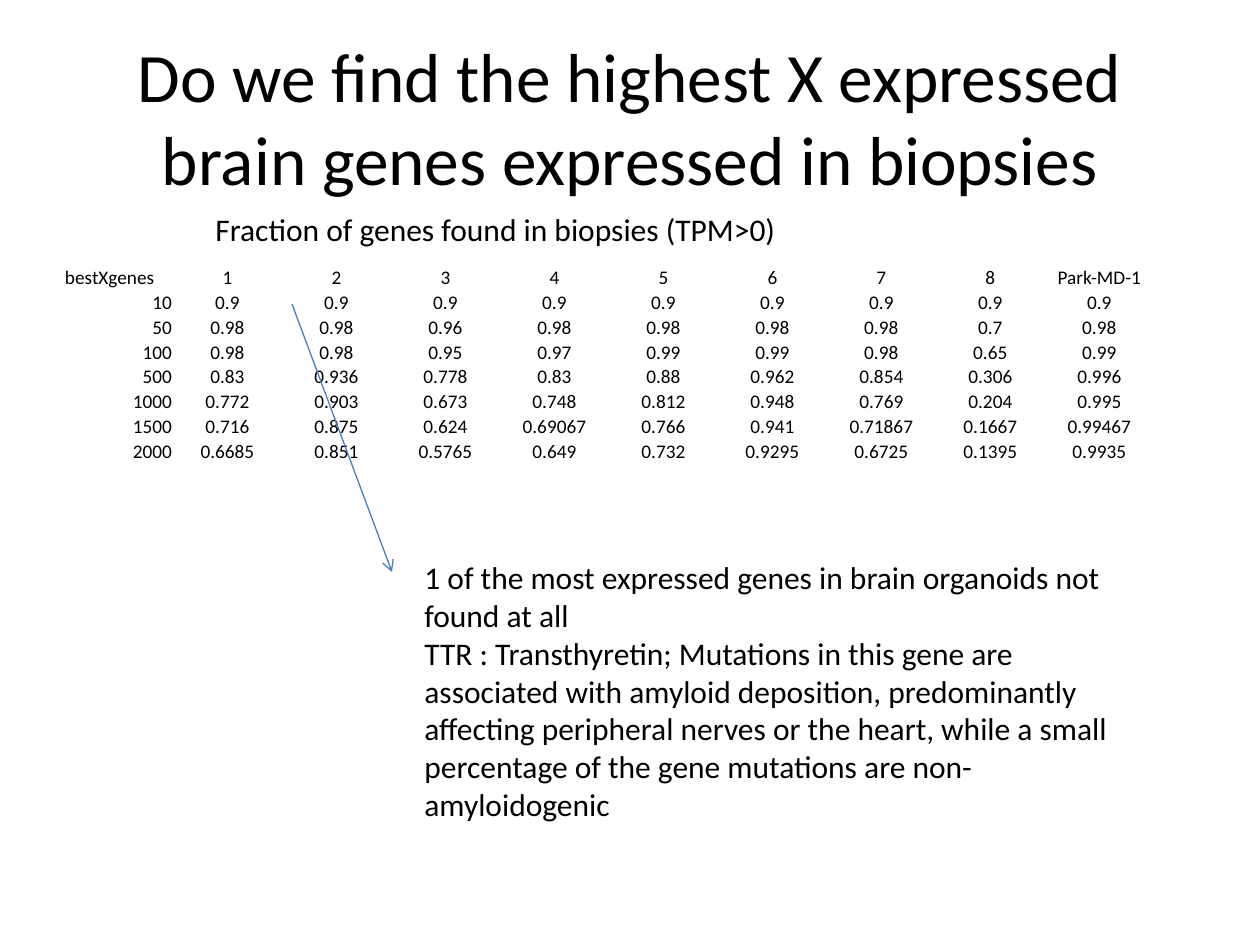
"""Build a slide with a table of gene fractions found in biopsies and a note on the missing gene."""
from pptx import Presentation
from pptx.dml.color import RGBColor
from pptx.enum.shapes import MSO_CONNECTOR
from pptx.enum.text import MSO_ANCHOR, MSO_AUTO_SIZE, PP_ALIGN
from pptx.oxml.ns import qn
from pptx.util import Emu, Pt
from lxml.etree import SubElement

TITLE = "Do we find the highest X expressed brain genes expressed in biopsies"
CAPTION = "Fraction of genes found in biopsies (TPM>0)"
NOTE = [
    "1 of the most expressed genes in brain organoids not found at all",
    "TTR : Transthyretin; Mutations in this gene are associated with amyloid deposition, "
    "predominantly affecting peripheral nerves or the heart, while a small percentage of "
    "the gene mutations are non-amyloidogenic",
]
HEADER = ["bestXgenes", 1, 2, 3, 4, 5, 6, 7, 8, "Park-MD-1"]
FRACTIONS = [
    [10, 0.9, 0.9, 0.9, 0.9, 0.9, 0.9, 0.9, 0.9, 0.9],
    [50, 0.98, 0.98, 0.96, 0.98, 0.98, 0.98, 0.98, 0.7, 0.98],
    [100, 0.98, 0.98, 0.95, 0.97, 0.99, 0.99, 0.98, 0.65, 0.99],
    [500, 0.83, 0.936, 0.778, 0.83, 0.88, 0.962, 0.854, 0.306, 0.996],
    [1000, 0.772, 0.903, 0.673, 0.748, 0.812, 0.948, 0.769, 0.204, 0.995],
    [1500, 0.716, 0.875, 0.624, 0.69067, 0.766, 0.941, 0.71867, 0.1667, 0.99467],
    [2000, 0.6685, 0.851, 0.5765, 0.649, 0.732, 0.9295, 0.6725, 0.1395, 0.9935],
]
COLORS = {"text": "000000", "arrow": "4B7EBC"}
FONT = "Calibri"
COL_W, HEAD_H, ROW_H = 109, 45, 24


def px(n):
    return Emu(n * 914400 // 126)


def style(p, size, align=PP_ALIGN.LEFT):
    p.alignment = align
    p.font.name, p.font.size = FONT, Pt(size)
    p.font.color.rgb = RGBColor.from_string(COLORS["text"])


def add_title(s, text, box):
    sp = s.shapes.title
    sp.left, sp.top, sp.width, sp.height = map(px, box)
    tf = sp.text_frame
    tf.text = text
    tf.auto_size = MSO_AUTO_SIZE.NONE
    tf.vertical_anchor = MSO_ANCHOR.MIDDLE
    style(tf.paragraphs[0], 39.6, PP_ALIGN.CENTER)


def add_text(s, lines, box, wrap):
    tf = s.shapes.add_textbox(*map(px, box)).text_frame
    tf.word_wrap = wrap
    tf.auto_size = MSO_AUTO_SIZE.SHAPE_TO_FIT_TEXT
    tf.text = "\n".join(lines)
    for p in tf.paragraphs:
        style(p, 18)


def add_fractions(s, rows, left, top):
    n_rows, n_cols = len(rows), len(rows[0])
    size = COL_W * n_cols, HEAD_H + ROW_H * (n_rows - 1)
    table = s.shapes.add_table(n_rows, n_cols, *map(px, (left, top, *size))).table
    table.first_row = table.horz_banding = False
    for col in table.columns:
        col.width = px(COL_W)
    for i, row in enumerate(rows):
        table.rows[i].height = px(ROW_H if i else HEAD_H)
        for j, value in enumerate(row):
            cell = table.cell(i, j)
            cell.fill.background()
            cell.vertical_anchor = MSO_ANCHOR.BOTTOM
            cell.margin_left = cell.margin_right = cell.margin_top = px(1)
            cell.margin_bottom = 0
            cell.text = str(value)
            first = PP_ALIGN.RIGHT if i else PP_ALIGN.LEFT
            style(cell.text_frame.paragraphs[0], 11, PP_ALIGN.CENTER if j else first)


def add_arrow(s, start, end):
    line = s.shapes.add_connector(MSO_CONNECTOR.STRAIGHT, *map(px, start + end))
    line.line.color.rgb = RGBColor.from_string(COLORS["arrow"])
    line.line.width = Pt(0.75)
    SubElement(line.line._get_or_add_ln(), qn("a:tailEnd"), type="arrow")
    SubElement(line._element.spPr, qn("a:effectLst"))


def main():
    prs = Presentation()
    prs.slide_width, prs.slide_height = px(1260), px(945)
    s = prs.slides.add_slide(prs.slide_layouts[5])
    add_title(s, TITLE, (63, 38, 1134, 157))
    add_fractions(s, [HEADER] + FRACTIONS, 64, 245)
    add_arrow(s, (292, 304), (392, 572))
    add_text(s, NOTE, (412, 552, 735, 280), True)
    add_text(s, [CAPTION], (203, 204, 592, 50), False)
    prs.save("out.pptx")


if __name__ == "__main__":
    main()
